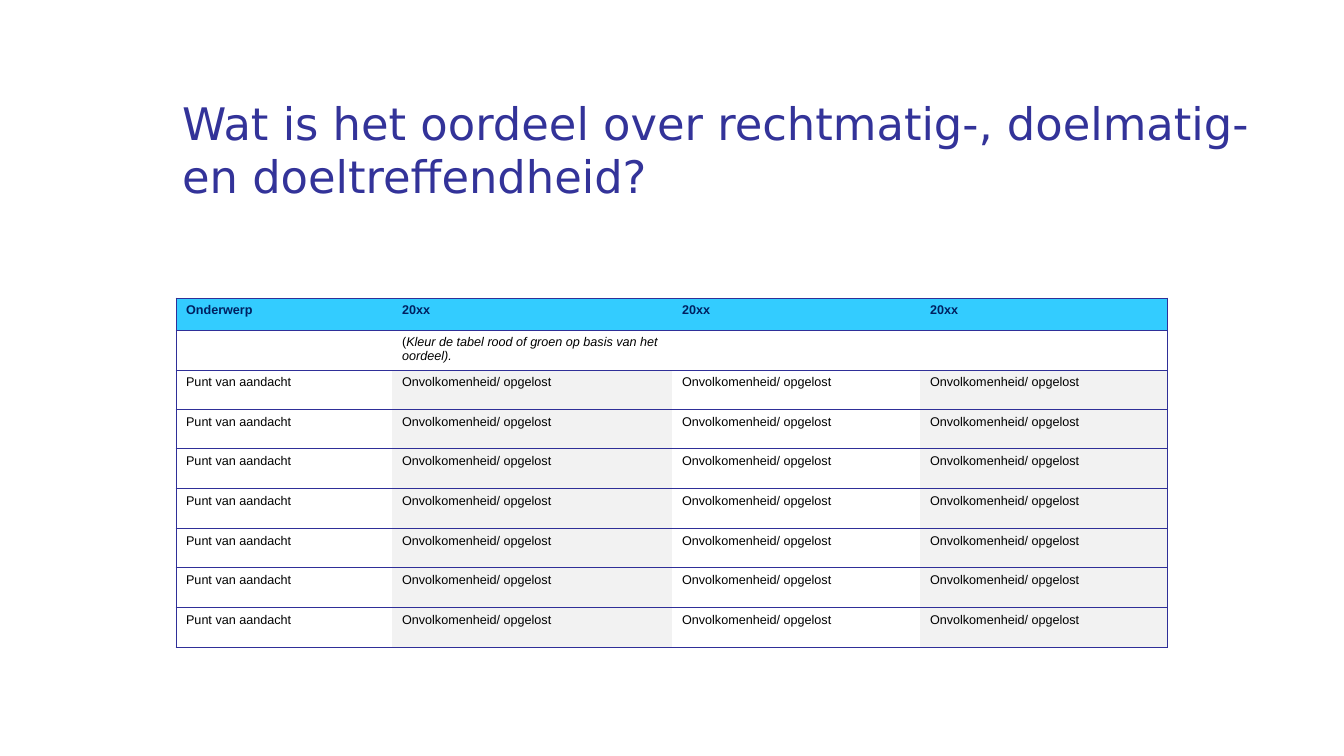
from lxml import etree
from pptx import Presentation
from pptx import util as u
from pptx.dml.color import RGBColor
from pptx.enum import text
from pptx.oxml import ns

NAVY = RGBColor(0x33, 0x33, 0x99)
BORDER = RGBColor(0x2F, 0x2F, 0x98)
HEADER_FILL = RGBColor(0x33, 0xCC, 0xFF)
HEADER_TEXT = RGBColor(0x00, 0x20, 0x60)
BAND = RGBColor(0xF2, 0xF2, 0xF2)
BLACK = RGBColor(0x00, 0x00, 0x00)

COLUMN_WIDTHS = [216, 280, 248, 248]
HEADER_HEIGHT = 32
BODY_HEIGHT = 318
TOPIC_COUNT = 7
HEADER = ["Onderwerp"] + ["20xx"] * 3
NOTE = ["", "(|Kleur de tabel rood of groen op basis van het oordeel).", "", ""]
TOPIC = ["Punt van aandacht"] + ["Onvolkomenheid/ opgelost"] * 3


def px(length):
    return u.Emu(length * 9071)


class SlideBuilder:
    """Holds the slide style and draws the title and table on the current page."""

    def __init__(self, deck):
        self.page = deck.slides.add_slide(deck.slide_layouts[5])
        self.title_font = "DejaVu Sans"
        self.table_font = "Arial"

    def title(self, words, left, top, width, height):
        box = self.page.shapes.title
        box.left, box.top, box.width, box.height = map(px, (left, top, width, height))
        frame = box.text_frame
        frame.text = words
        frame.word_wrap = True
        frame.auto_size = text.MSO_AUTO_SIZE.NONE
        frame.vertical_anchor = text.MSO_ANCHOR.MIDDLE
        para = frame.paragraphs[0]
        para.alignment = text.PP_ALIGN.LEFT
        self.style(para, self.title_font, 32, NAVY)

    def style(self, para, name, size, color, bold=False):
        para.font.name = name
        para.font.size = u.Pt(size)
        para.font.color.rgb = color
        para.font.bold = bold

    def borders(self, cell, visible):
        properties = cell._tc.get_or_add_tcPr()
        for side in "LRTB":
            line = etree.SubElement(properties, ns.qn(f"a:ln{side}"), w=str(u.Pt(0.75)))
            if side in visible:
                fill = etree.SubElement(line, ns.qn("a:solidFill"))
                etree.SubElement(fill, ns.qn("a:srgbClr"), val=str(BORDER))
            else:
                etree.SubElement(line, ns.qn("a:noFill"))

    def cell(self, cell, words, visible, fill, color, bold):
        self.borders(cell, visible)
        if fill is None:
            cell.fill.background()
        else:
            cell.fill.solid()
            cell.fill.fore_color.rgb = fill
        para = cell.text_frame.paragraphs[0]
        self.style(para, self.table_font, 9, color, bold)
        plain, _, slanted = words.partition("|")
        for content, italic in ((plain, False), (slanted, True)):
            if content:
                span = para.add_run()
                span.text = content
                if italic:
                    span.font.italic = True

    def table(self, rows, left, top):
        width = sum(COLUMN_WIDTHS)
        height = HEADER_HEIGHT + BODY_HEIGHT
        frame = self.page.shapes.add_table(
            len(rows), len(COLUMN_WIDTHS), *map(px, (left, top, width, height)))
        grid = frame.table
        grid.first_row = grid.horz_banding = False
        for column, column_width in zip(grid.columns, COLUMN_WIDTHS):
            column.width = px(column_width)
        body_count = len(rows) - 1
        edges = [round(i * BODY_HEIGHT / body_count) for i in range(body_count + 1)]
        heights = [HEADER_HEIGHT] + [b - a for a, b in zip(edges, edges[1:])]
        for r, (row, row_height) in enumerate(zip(rows, heights)):
            grid.rows[r].height = px(row_height)
            for c, words in enumerate(row):
                visible = "TB" + ("L" if c == 0 else "") + ("R" if c == len(row) - 1 else "")
                banded = r > 1 and c % 2 == 1
                fill = HEADER_FILL if r == 0 else BAND if banded else None
                color = HEADER_TEXT if r == 0 else BLACK
                self.cell(grid.cell(r, c), words, visible, fill, color, r == 0)


def main():
    deck = Presentation()
    deck.slide_width, deck.slide_height = px(1344), px(756)
    builder = SlideBuilder(deck)
    builder.title("Wat is het oordeel over rechtmatig-, doelmatig- en doeltreffendheid?",
                  172, 86, 1125, 126)
    builder.table([HEADER, NOTE] + [TOPIC] * TOPIC_COUNT, 176, 298)
    deck.save("out.pptx")


if __name__ == "__main__":
    main()
